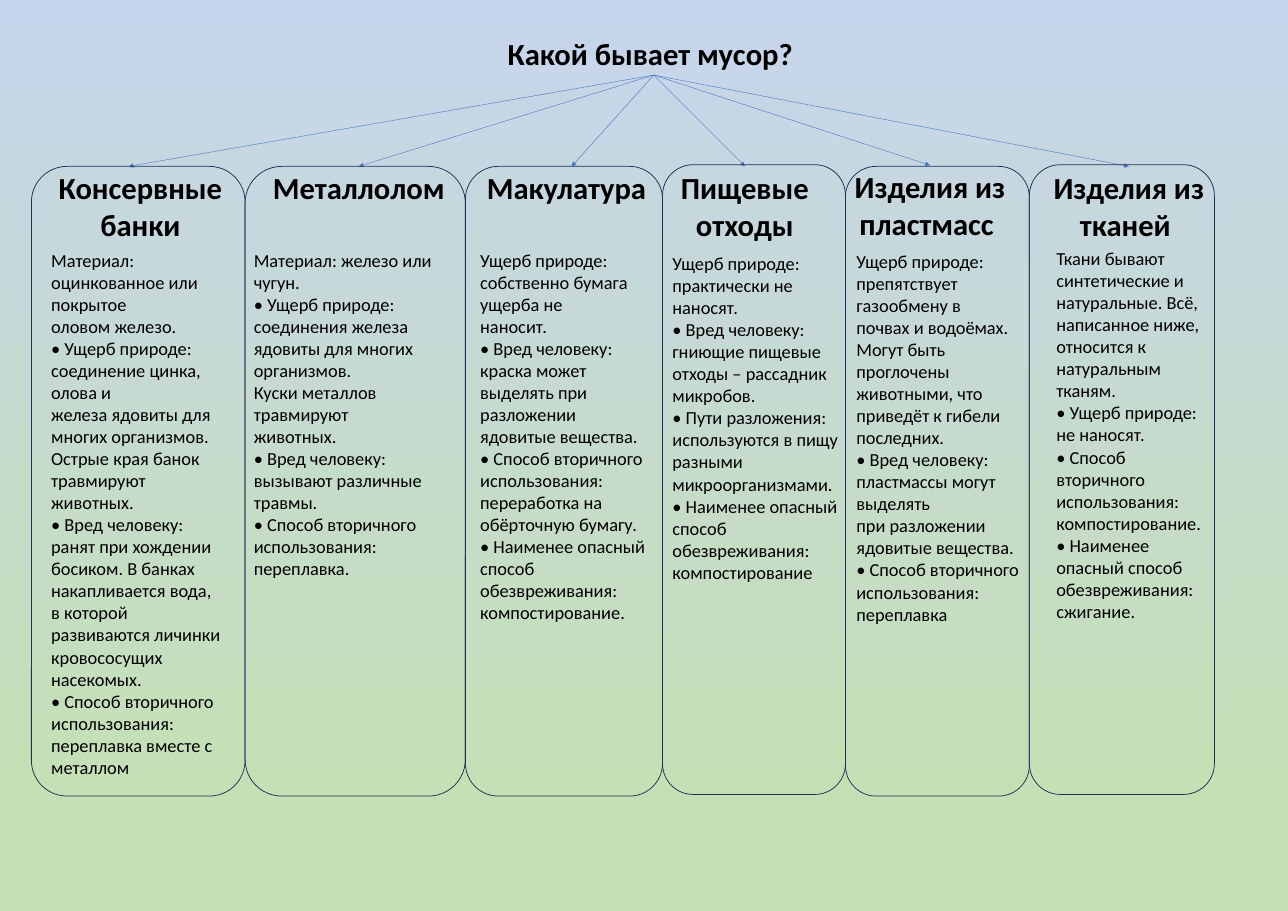
from dataclasses import dataclass
from itertools import pairwise

from lxml import etree
from pptx import Presentation
from pptx.dml.color import RGBColor
from pptx.enum.shapes import MSO_CONNECTOR, MSO_SHAPE
from pptx.enum.text import MSO_AUTO_SIZE, PP_ALIGN
from pptx.oxml.ns import qn
from pptx.util import Cm, Inches, Pt


@dataclass(frozen=True)
class Theme:
    font: str = "Calibri"
    heading_size: int = 40
    body_size: int = 24
    line_pitch: float = 1.21
    text: RGBColor = RGBColor.from_string("000000")
    frame: RGBColor = RGBColor.from_string("1E3256")
    arrow: RGBColor = RGBColor.from_string("4472C4")
    sky: RGBColor = RGBColor.from_string("C7D5ED")
    grass: RGBColor = RGBColor.from_string("C5E0B4")


@dataclass(frozen=True)
class Waste:
    """One column; a place is (left, width, top) in inches."""
    name: str
    name_place: tuple
    name_lines: int
    facts_place: tuple
    facts_lines: int
    facts: str
    frame_top: float = 3.02
    centred: bool = True
    arrow_x: float | None = None


THEME = Theme()
A2_WIDTH, A2_HEIGHT = Cm(59.4), Cm(42)
COLUMN_EDGES = (0.57, 4.45, 8.45, 12.03, 15.35, 18.69, 22.05)
FRAME_HEIGHT = 11.43
NAME_ROW, RAISED_ROW, FACTS_ROW = 3.02, 2.99, 4.47

WASTES = (
    Waste("Консервные банки", (0.67, 3.76, NAME_ROW), 2, (0.83, 3.33, FACTS_ROW), 24,
          """Материал: оцинкованное или покрытое
оловом железо.
• Ущерб природе: соединение цинка, олова и
железа ядовиты для многих организмов.
Острые края банок травмируют животных.
• Вред человеку: ранят при хождении
босиком. В банках накапливается вода, в которой развиваются личинки
кровососущих насекомых.
• Способ вторичного использования:
переплавка вместе с металлом""", arrow_x=2.34),
    Waste("Металлолом", (4.81, 3.41, NAME_ROW), 1, (4.51, 3.77, FACTS_ROW), 15,
          """Материал: железо или чугун.
• Ущерб природе: соединения железа
ядовиты для многих организмов.
Куски металлов травмируют
животных.
• Вред человеку: вызывают различные
травмы.
• Способ вторичного использования:
переплавка."""),
    Waste("Макулатура", (8.74, 3.28, NAME_ROW), 1, (8.62, 3.2, FACTS_ROW), 17,
          """Ущерб природе: собственно бумага ущерба не
наносит.
• Вред человеку: краска может выделять при
разложении ядовитые вещества.
• Способ вторичного использования:
переработка на обёрточную бумагу.
• Наименее опасный способ обезвреживания:
компостирование.""", centred=False),
    Waste("Пищевые отходы", (11.86, 3.33, NAME_ROW), 2, (12.11, 3.33, 4.53), 15,
          """Ущерб природе: практически не наносят.
• Вред человеку: гниющие пищевые отходы – рассадник микробов.
• Пути разложения: используются в пищу разными микроорганизмами.
• Наименее опасный способ обезвреживания: компостирование""",
          frame_top=RAISED_ROW),
    Waste("Изделия из пластмасс ", (15.08, 3.61, 3), 2, (15.45, 3.33, 4.49), 17,
          """Ущерб природе: препятствует газообмену в
почвах и водоёмах. Могут быть проглочены
животными, что приведёт к гибели последних.
• Вред человеку: пластмассы могут выделять
при разложении ядовитые вещества.
• Способ вторичного использования:
переплавка"""),
    Waste("Изделия из тканей ", (18.69, 3.61, NAME_ROW), 2, (19.08, 2.92, 4.44), 17,
          """Ткани бывают синтетические и натуральные. Всё,
написанное ниже, относится к натуральным
тканям.
• Ущерб природе: не наносят.
• Способ вторичного использования:
компостирование.
• Наименее опасный способ обезвреживания:
сжигание.""", frame_top=RAISED_ROW),
)


def paint_background(slide):
    fill = slide.background.fill
    fill.gradient()
    fill.gradient_angle = 270
    stops = ((0, THEME.sky), (0.88, THEME.grass))
    for stop, (position, colour) in zip(fill.gradient_stops, stops):
        stop.position = position
        stop.color.rgb = colour


def add_text(slide, text, place, lines, size, bold=False, centred=False):
    """Add a text box tall enough for the given number of lines."""
    left, width, top = place
    height = lines * size * THEME.line_pitch / 72 + 0.1
    box = slide.shapes.add_textbox(*map(Inches, (left, top, width, height)))
    frame = box.text_frame
    frame.word_wrap = True
    frame.auto_size = MSO_AUTO_SIZE.SHAPE_TO_FIT_TEXT
    frame.text = text
    for paragraph in frame.paragraphs:
        paragraph.alignment = PP_ALIGN.CENTER if centred else PP_ALIGN.LEFT
        for run in paragraph.runs:
            run.font.name = THEME.font
            run.font.size = Pt(size)
            run.font.bold = bold
            run.font.color.rgb = THEME.text
    return box


def add_heading(slide, text, place, lines=1, centred=True):
    return add_text(slide, text, place, lines, THEME.heading_size, True, centred)


def add_arrow(slide, title, name, tip_x=None):
    """Point from the title to the top middle of a name, or to tip_x above it."""
    arrow = slide.shapes.add_connector(MSO_CONNECTOR.STRAIGHT, 0, 0, 0, 0)
    arrow.begin_connect(title, 2)
    if tip_x is None:
        arrow.end_connect(name, 0)
    else:
        arrow.end_x, arrow.end_y = Inches(tip_x), name.top
    arrow.line.color.rgb = THEME.arrow
    arrow.line.width = Pt(0.5)
    etree.SubElement(arrow.line._get_or_add_ln(), qn("a:tailEnd"), type="triangle")
    etree.SubElement(arrow._element.spPr, qn("a:effectLst"))


def add_frame(slide, left, right, top):
    frame = slide.shapes.add_shape(
        MSO_SHAPE.ROUNDED_RECTANGLE,
        *map(Inches, (left, top, right - left, FRAME_HEIGHT)))
    frame.shadow.inherit = False
    frame.fill.background()
    frame.line.color.rgb = THEME.frame
    frame.line.width = Pt(1)


def main():
    deck = Presentation()
    deck.slide_width, deck.slide_height = A2_WIDTH, A2_HEIGHT
    slide = deck.slides.add_slide(deck.slide_layouts[6])
    paint_background(slide)
    title = add_heading(slide, "Какой бывает мусор? ", (7.14, 9.46, 0.59))
    for waste, (left, right) in zip(WASTES, pairwise(COLUMN_EDGES)):
        name = add_heading(slide, waste.name, waste.name_place,
                           waste.name_lines, waste.centred)
        add_text(slide, waste.facts, waste.facts_place,
                 waste.facts_lines, THEME.body_size)
        add_arrow(slide, title, name, waste.arrow_x)
        add_frame(slide, left, right, waste.frame_top)
    deck.save("out.pptx")


if __name__ == "__main__":
    main()
